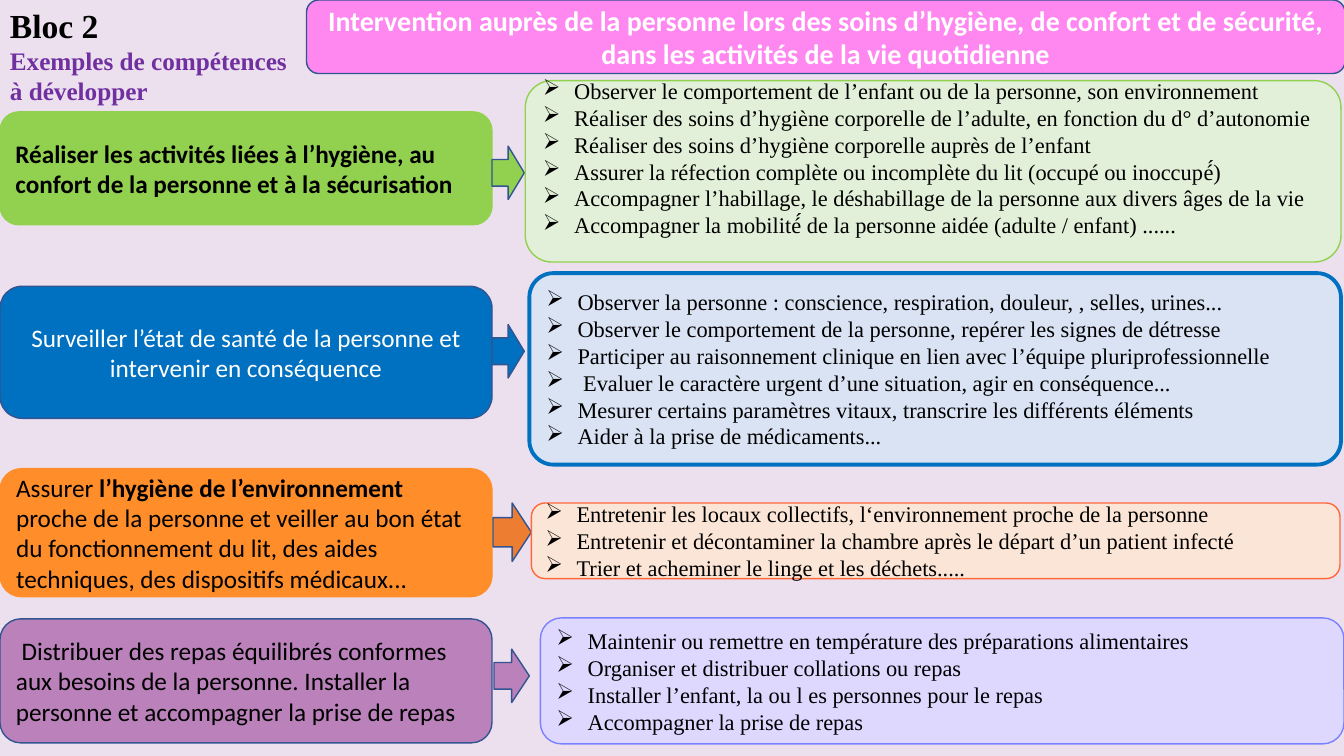
import pptx
import pptx.util
import pptx.dml.color
import pptx.enum.shapes
import pptx.enum.text
import lxml.etree

Inches = pptx.util.Inches
Pt = pptx.util.Pt
SHAPE = pptx.enum.shapes.MSO_SHAPE
ALIGN = pptx.enum.text.PP_ALIGN
MID = pptx.enum.text.MSO_ANCHOR.MIDDLE
SANS, SERIF = "Calibri", "Times New Roman"
NS = "{http://schemas.openxmlformats.org/drawingml/2006/main}"

COLORS = {
    "back": "ECE0EF", "black": "000000", "white": "FFFFFF", "edge": "325491",
    "violet": "7030A0", "pink": "FF87F0", "green": "92D050", "mint": "E2F0D9",
    "blue": "0070C0", "sky": "DAE3F3", "orange": "FF8D2A", "rust": "ED7D31",
    "peach": "FBE5D6", "coral": "FF6838", "plum": "BA81BA", "lilac": "DED8FF",
    "iris": "7A81FF",
}

ROWS = [
    {
        "box": (0, 0.8, 13.33, 1.8),
        "label": (0.31, 1.12, "green", "green", "black", ALIGN.LEFT),
        "text": [("Réaliser les activités liées à l’hygiène, au confort de la personne et à la sécurisation", True)],
        "arrow": (4.88, 0.65, 0.32, 0.53, "green"),
        "panel": (5.21, 0, 8.09, 1.8, "mint", "green", 1, 0.147, 0.32),
        "items": [
            "Observer le comportement de l’enfant ou de la personne, son environnement",
            "Réaliser des soins d’hygiène corporelle de l’adulte, en fonction du d° d’autonomie",
            "Réaliser des soins d’hygiène corporelle auprès de l’enfant",
            "Assurer la réfection complète ou incomplète du lit (occupé ou inoccupé́)",
            "Accompagner l’habillage, le déshabillage de la personne aux divers âges de la vie",
            "Accompagner la mobilité́ de la personne aidée (adulte / enfant) ......",
        ],
    },
    {
        "box": (0, 2.71, 13.33, 1.9),
        "label": (0.13, 1.31, "blue", "edge", "white", ALIGN.CENTER),
        "text": [("Surveiller l’état de santé de la personne et intervenir en conséquence", False)],
        "arrow": (4.88, 0.51, 0.32, 0.53, "blue"),
        "panel": (5.25, 0, 8.05, 1.9, "sky", "blue", 2.75, 0.126, 0.05),
        "items": [
            "Observer la personne : conscience, respiration, douleur, , selles, urines...",
            "Observer le comportement de la personne, repérer les signes de détresse",
            "Participer au raisonnement clinique en lien avec l’équipe pluriprofessionnelle",
            " Evaluer le caractère urgent d’une situation, agir en conséquence...",
            "Mesurer certains paramètres vitaux, transcrire les différents éléments",
            "Aider à la prise de médicaments...",
        ],
    },
    {
        "box": (0, 4.65, 13.33, 1.27),
        "label": (0, 1.27, "orange", "orange", "black", ALIGN.LEFT),
        "text": [
            ("Assurer ", False),
            ("l’hygiène de l’environnement ", True),
            ("proche de la personne et veiller au bon état du fonctionnement du lit, "
             "des aides techniques, des dispositifs médicaux...", False),
        ],
        "arrow": (4.89, 0.34, 0.38, 0.58, "rust"),
        "panel": (5.27, 0.34, 8.02, 0.75, "peach", "coral", 1, 0.182, 0.05),
        "items": [
            "Entretenir les locaux collectifs, l‘environnement proche de la personne",
            "Entretenir et décontaminer la chambre après le départ d’un patient infecté",
            "Trier et acheminer le linge et les déchets.....",
        ],
    },
    {
        "box": (0, 6.13, 13.33, 1.25),
        "label": (0.01, 1.23, "plum", "edge", "black", ALIGN.LEFT),
        "text": [(" Distribuer des repas équilibrés conformes aux besoins de la personne. "
                  "Installer la personne et accompagner la prise de repas", False)],
        "arrow": (4.9, 0.31, 0.35, 0.53, "plum"),
        "panel": (5.36, 0, 7.97, 1.25, "lilac", "iris", 1, 0.167, 0.05),
        "items": [
            "Maintenir ou remettre en température des préparations alimentaires",
            "Organiser et distribuer collations ou repas",
            "Installer l’enfant, la ou l es personnes pour le repas",
            "Accompagner la prise de repas",
        ],
    },
]


def color(name):
    return pptx.dml.color.RGBColor.from_string(COLORS[name])


def style(font, face, size, tint, bold=None):
    font.name = face
    font.size = Pt(size)
    font.color.rgb = color(tint)
    font.bold = bold


def block(slide, kind, box, fill, edge, width=1):
    shape = slide.shapes.add_shape(kind, *map(Inches, box))
    shape.shadow.inherit = False
    shape.fill.solid()
    shape.fill.fore_color.rgb = color(fill)
    shape.line.color.rgb = color(edge)
    shape.line.width = Pt(width)
    shape.text_frame.word_wrap = True
    shape.text_frame.vertical_anchor = MID
    return shape


def bullet(para):
    props = para._p.get_or_add_pPr()
    props.set("marL", str(Inches(0.31)))
    props.set("indent", str(Inches(-0.31)))
    lxml.etree.SubElement(props, NS + "buChar").set("char", "➢")


def head(slide, box):
    frame = slide.shapes.add_textbox(*map(Inches, box)).text_frame
    frame.word_wrap = True
    frame.text = "Bloc 2\nExemples de compétences\nà développer"
    sizes = [(24, "black"), (18, "violet"), (18, "violet")]
    for para, (size, tint) in zip(frame.paragraphs, sizes):
        style(para.font, SERIF, size, tint, True)


def title(slide, box):
    frame = block(slide, SHAPE.ROUNDED_RECTANGLE, box, "pink", "edge").text_frame
    frame.text = ("Intervention auprès de la personne lors des soins d’hygiène, de confort "
                  "et de sécurité, dans les activités de la vie quotidienne")
    para = frame.paragraphs[0]
    para.alignment = ALIGN.CENTER
    style(para.font, SANS, 20, "white", True)


def label(slide, box, fill, edge, tint, align, text):
    shape = block(slide, SHAPE.ROUNDED_RECTANGLE, box, fill, edge)
    para = shape.text_frame.paragraphs[0]
    para.alignment = align
    style(para.font, SANS, 18, tint)
    for words, bold in text:
        run = para.add_run()
        run.text = words
        run.font.bold = bold


def panel(slide, box, fill, edge, width, curve, foot, items):
    shape = block(slide, SHAPE.ROUNDED_RECTANGLE, box, fill, edge, width)
    shape.adjustments[0] = curve
    frame = shape.text_frame
    frame.margin_bottom = Inches(foot)
    frame.text = "\n".join(items)
    for para in frame.paragraphs:
        para.alignment = ALIGN.LEFT
        bullet(para)
        style(para.font, SERIF, 16, "black")


def row(slide, data):
    left, top = data["box"][:2]
    drop, high, *look = data["label"]
    label(slide, (left, top + drop, 4.88, high), *look, data["text"])
    dx, dy, wide, high, fill = data["arrow"]
    block(slide, SHAPE.RIGHT_ARROW, (left + dx, top + dy, wide, high), fill, "edge")
    dx, dy, wide, high, *look = data["panel"]
    panel(slide, (left + dx, top + dy, wide, high), *look, data["items"])


def main():
    deck = pptx.Presentation()
    deck.slide_width = Inches(13.33)
    deck.slide_height = Inches(7.5)
    slide = deck.slides.add_slide(deck.slide_layouts[6])
    slide.background.fill.solid()
    slide.background.fill.fore_color.rgb = color("back")
    head(slide, (0, 0, 3.04, 1.11))
    title(slide, (3.04, 0, 10.3, 0.73))
    for data in ROWS:
        row(slide, data)
    deck.save("out.pptx")


if __name__ == "__main__":
    main()
